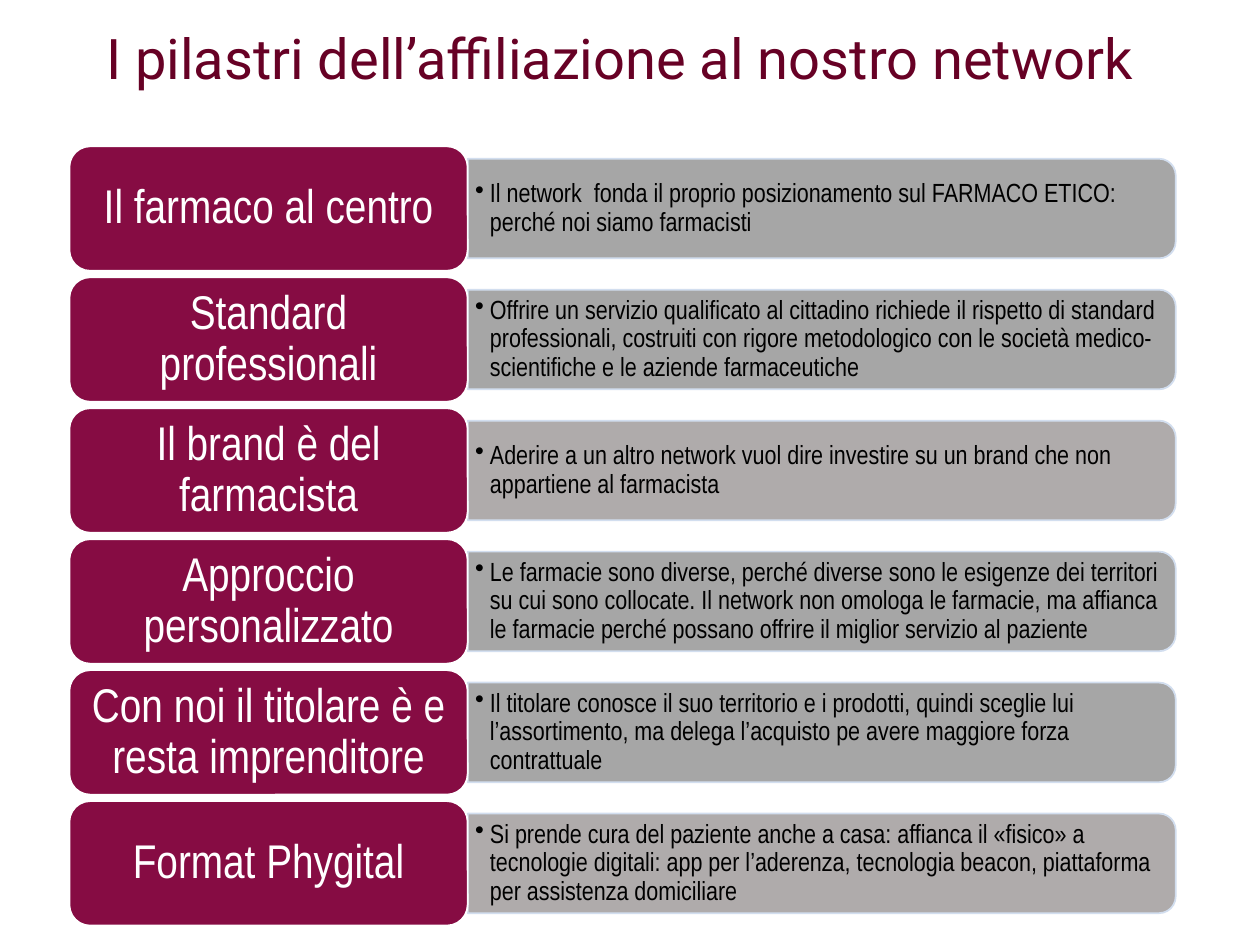
import lxml.etree
import pptx
import pptx.dml.color
import pptx.enum.shapes
import pptx.enum.text
import pptx.oxml.ns
import pptx.util

Cm = pptx.util.Cm
Pt = pptx.util.Pt
SHAPE = pptx.enum.shapes.MSO_SHAPE
ALIGN = pptx.enum.text.PP_ALIGN
ANCHOR = pptx.enum.text.MSO_ANCHOR

COLORS = {
    "title": "670125",
    "pillar": "860C43",
    "white": "FFFFFF",
    "black": "000000",
    "band": "A6A6A6",
    "warm_band": "AFABAB",
    "band_line": "D2DEEF",
}

PILLARS = [
    ("Il farmaco al centro", "band",
     "Il network  fonda il proprio posizionamento sul FARMACO ETICO: "
     "perché noi siamo farmacisti"),
    ("Standard professionali", "band",
     "Offrire un servizio qualificato al cittadino richiede il rispetto di standard "
     "professionali, costruiti con rigore metodologico con le società "
     "medico-scientifiche e le aziende farmaceutiche"),
    ("Il brand è del farmacista", "warm_band",
     "Aderire a un altro network vuol dire investire su un brand che non "
     "appartiene al farmacista"),
    ("Approccio personalizzato", "band",
     "Le farmacie sono diverse, perché diverse sono le esigenze dei territori su cui "
     "sono collocate. Il network non omologa le farmacie, ma affianca le farmacie "
     "perché possano offrire il miglior servizio al paziente"),
    ("Con noi il titolare è e resta imprenditore", "band",
     "Il titolare conosce il suo territorio e i prodotti, quindi sceglie lui "
     "l’assortimento, ma delega l’acquisto pe avere maggiore forza contrattuale"),
    ("Format Phygital", "warm_band",
     "Si prende cura del paziente anche a casa: affianca il «fisico» a tecnologie "
     "digitali: app per l’aderenza, tecnologia beacon, piattaforma per assistenza "
     "domiciliare"),
]


def rgb(name):
    """Return the palette colour with the given name."""
    return pptx.dml.color.RGBColor.from_string(COLORS[name])


def write_text(holder, text, *, size, color, font="Arial Narrow", align=ALIGN.LEFT,
               anchor=ANCHOR.MIDDLE, inset=(0.28, 0.15), spacing=0.9, bullet=False):
    """Write one formatted paragraph into a shape or text box."""
    frame = holder.text_frame
    frame.word_wrap = True
    frame.vertical_anchor = anchor
    frame.margin_left = frame.margin_right = Cm(inset[0])
    frame.margin_top = frame.margin_bottom = Cm(inset[1])
    paragraph = frame.paragraphs[0]
    paragraph.alignment = align
    paragraph.line_spacing = spacing
    run = paragraph.add_run()
    run.text = text
    run.font.name = font
    run.font.size = Pt(size)
    run.font.color.rgb = rgb(color)
    if bullet:
        properties = paragraph._p.get_or_add_pPr()
        properties.set("marL", str(Cm(0.3)))
        properties.set("indent", str(Cm(-0.3)))
        mark = lxml.etree.SubElement(properties, pptx.oxml.ns.qn("a:buChar"))
        mark.set("char", "•")


def add_panel(slide, kind, box, fill, line):
    """Add a filled and outlined shape in the given box."""
    panel = slide.shapes.add_shape(kind, *map(Cm, box))
    panel.shadow.inherit = False
    panel.fill.solid()
    panel.fill.fore_color.rgb = rgb(fill)
    panel.line.color.rgb = rgb(line)
    panel.line.width = Pt(1)
    return panel


def add_title(slide, box):
    """Add the slide heading."""
    heading = slide.shapes.add_textbox(*map(Cm, box))
    write_text(heading, "I pilastri dell’affiliazione al nostro network", size=32,
               color="title", font="Roboto", align=ALIGN.CENTER, anchor=ANCHOR.TOP,
               inset=(0.15, 0.15), spacing=1.0)


def add_pillar(slide, box, name, band_color, description):
    """Add one pillar: a name card and the band that describes it."""
    left, top, width, height = box
    card_width = width * 0.36
    band_left, band_width = left + card_width, width - card_width
    band_height = height * 0.8
    center_x, center_y = band_left + band_width / 2, top + height / 2
    band = add_panel(slide, SHAPE.ROUND_2_SAME_RECTANGLE,
                     (center_x - band_height / 2, center_y - band_width / 2,
                      band_height, band_width), band_color, "band_line")
    band.rotation = 90

    text_height = band_height - 0.2
    details = slide.shapes.add_textbox(
        *map(Cm, (band_left, center_y - text_height / 2, band_width - 0.1, text_height)))
    write_text(details, description, size=15, color="black", inset=(0.15, 0.08),
               bullet=True)

    card = add_panel(slide, SHAPE.ROUNDED_RECTANGLE, (left, top, card_width, height),
                     "pillar", "white")
    write_text(card, name, size=27, color="white", align=ALIGN.CENTER)


def add_pillars(slide, box):
    """Stack all pillars evenly in the given box."""
    left, top, width, height = box
    gap = 0.13
    row_height = (height - gap * (len(PILLARS) - 1)) / len(PILLARS)
    for index, pillar in enumerate(PILLARS):
        row_top = top + index * (row_height + gap)
        add_pillar(slide, (left, row_top, width, row_height), *pillar)


def main():
    """Build and save the presentation."""
    deck = pptx.Presentation()
    deck.slide_width, deck.slide_height = Cm(25.4), Cm(19.05)
    slide = deck.slides.add_slide(deck.slide_layouts[6])
    add_pillars(slide, (1.4, 2.95, 22.3, 15.71))
    add_title(slide, (1.3, 0.33, 22.4, 2.03))
    deck.save("out.pptx")


if __name__ == "__main__":
    main()
